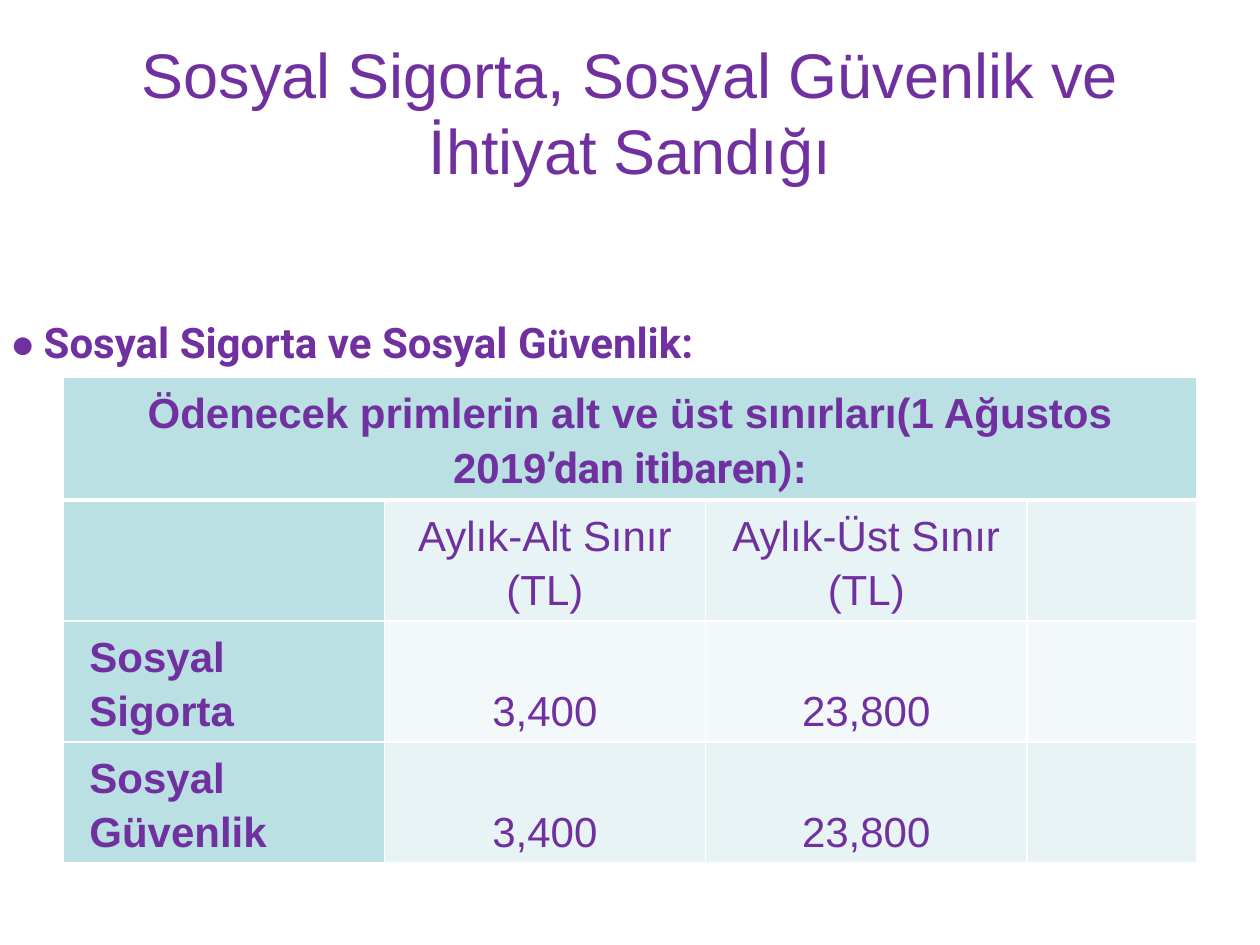
from lxml import etree
from pptx import Presentation
from pptx.dml.color import RGBColor
from pptx.enum.text import MSO_ANCHOR, MSO_AUTO_SIZE, PP_ALIGN
from pptx.oxml.ns import qn
from pptx.util import Inches, Pt

CENTER, LEFT = PP_ALIGN.CENTER, PP_ALIGN.LEFT
MIDDLE, BOTTOM = MSO_ANCHOR.MIDDLE, MSO_ANCHOR.BOTTOM
COLORS = {"text": "7030A0", "header": "BBE0E3", "band": "E7F3F4",
          "light": "F3F9FA", "border": "FFFFFF"}
MARGIN = 0.5
COLUMN_WIDTHS = [2.55, 2.55, 2.55, 1.35]
ROW_HEIGHT = 0.96


def write(para, pieces, size=24, bold=False, align=LEFT, spacing=1.0):
    """Fill a paragraph with (text, font) pieces in one shared format."""
    para.alignment, para.line_spacing = align, spacing
    for text, font in pieces:
        span = para.add_run()
        span.text = text
        span.font.name, span.font.size, span.font.bold = font, Pt(size), bold
        span.font.color.rgb = RGBColor.from_string(COLORS["text"])


def style_cell(cell, fill, top=1, bottom=1):
    """Set fill, margins, anchor and white borders (widths in points)."""
    cell.vertical_anchor = BOTTOM
    cell.margin_left = cell.margin_right = Inches(0.21)
    cell.margin_top = cell.margin_bottom = Inches(0.05)
    cell.fill.solid()
    cell.fill.fore_color.rgb = RGBColor.from_string(COLORS[fill])
    properties = cell._tc.get_or_add_tcPr()
    edges = [("L", 1), ("R", 1), ("T", top), ("B", bottom)]
    for position, (side, width) in enumerate(edges):
        line = etree.Element(qn(f"a:ln{side}"), w=str(Pt(width)))
        solid = etree.SubElement(line, qn("a:solidFill"))
        etree.SubElement(solid, qn("a:srgbClr"), val=COLORS["border"])
        properties.insert(position, line)


deck = Presentation()
deck.slide_width, deck.slide_height = Inches(10), Inches(7.5)
page = deck.slides.add_slide(deck.slide_layouts[5])

# Title
title = page.shapes.title
title.left, title.top = Inches(MARGIN), Inches(0.3)
title.width, title.height = Inches(9), Inches(1.17)
title.text_frame.vertical_anchor = MIDDLE
write(title.text_frame.paragraphs[0],
      [("Sosyal Sigorta, Sosyal Güvenlik ve İhtiyat Sandığı", "Arial")],
      size=36, align=CENTER)

# Premium limits table
rows = [
    [[("Ödenecek primlerin alt ve üst sınırları(1 Ağustos 2019", "Arial"),
      ("’dan itibaren)", "Roboto"), (":", "Arial")], None, None, None],
    [None, [("Aylık-Alt Sınır (TL)", "Arial")],
     [("Aylık-Üst Sınır (TL)", "Arial")], None],
    [[("Sosyal Sigorta", "Arial")], [("3,400", "Arial")],
     [("23,800", "Arial")], None],
    [[("Sosyal Güvenlik", "Arial")], [("3,400", "Arial")],
     [("23,800", "Arial")], None],
]
table = page.shapes.add_table(
    len(rows), len(COLUMN_WIDTHS), Inches(MARGIN), Inches(2.99),
    Inches(sum(COLUMN_WIDTHS)), Inches(ROW_HEIGHT * len(rows))).table
for column, width in zip(table.columns, COLUMN_WIDTHS):
    column.width = Inches(width)
table.cell(0, 0).merge(table.cell(0, len(COLUMN_WIDTHS) - 1))

for r, row in enumerate(rows):
    for c, pieces in enumerate(row):
        cell = table.cell(r, c)
        heading = r == 0 or c == 0
        fill = "header" if heading else "band" if r % 2 else "light"
        style_cell(cell, fill, top=3 if r == 1 else 1, bottom=3 if r == 0 else 1)
        if pieces:
            write(cell.text_frame.paragraphs[0], pieces, bold=heading,
                  align=CENTER if r == 0 or c > 0 else LEFT, spacing=1.15)

# Line above the table
box = page.shapes.add_textbox(0, Inches(2.46), Inches(10.54), Inches(0.5))
box.text_frame.word_wrap = True
box.text_frame.auto_size = MSO_AUTO_SIZE.SHAPE_TO_FIT_TEXT
write(box.text_frame.paragraphs[0],
      [("•", "Calibri"), (" Sosyal Sigorta ve Sosyal G", "Roboto"),
       ("ü", "Calibri"), ("venlik:", "Roboto")], bold=True)

deck.save("out.pptx")
